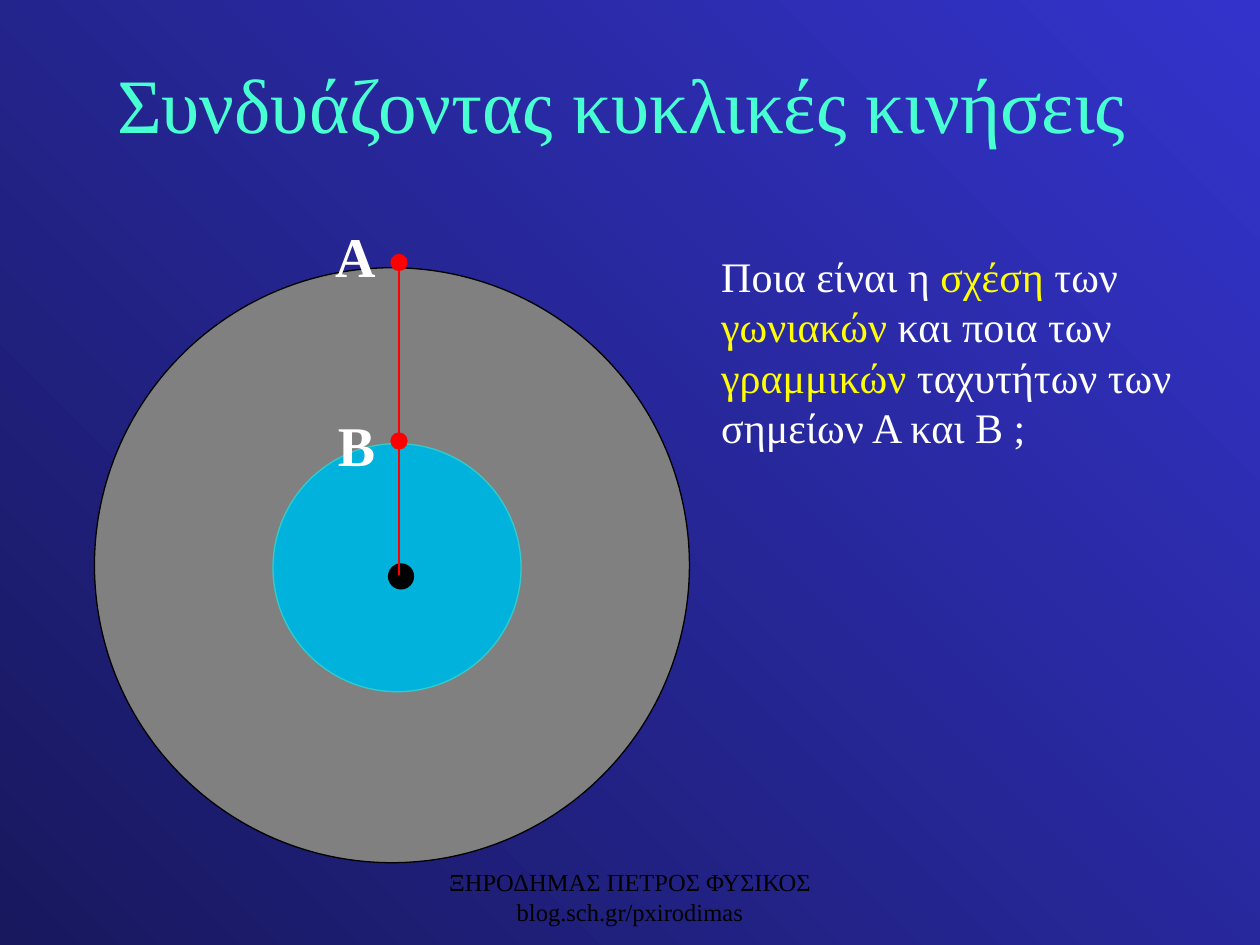
import dataclasses

import lxml.etree
import pptx
import pptx.dml.color
import pptx.enum.shapes
import pptx.enum.text
import pptx.oxml.ns
import pptx.util

Pt = pptx.util.Pt


@dataclasses.dataclass(frozen=True)
class Theme:
    font: str = "Times New Roman"
    background_start: str = "18185E"
    background_end: str = "3333CC"
    title: str = "47FFD1"
    text: str = "FFFFFF"
    highlight: str = "FFFF00"
    dark: str = "000000"
    outer_disc: str = "808080"
    inner_disc: str = "00B2DC"
    inner_outline: str = "33CCCC"
    radius: str = "FF0000"
    title_size: float = 44
    label_size: float = 32
    body_size: float = 24
    footer_size: float = 14
    line_width: float = 0.75


THEME = Theme()
ALIGN = pptx.enum.text.PP_ALIGN
ANCHOR = pptx.enum.text.MSO_ANCHOR
AUTO_SIZE = pptx.enum.text.MSO_AUTO_SIZE


def rgb(color):
    return pptx.dml.color.RGBColor.from_string(color)


def paint_background(slide):
    fill = slide.background.fill
    fill.gradient()
    fill.gradient_angle = 45
    for stop, color in zip(fill.gradient_stops, (THEME.background_start, THEME.background_end)):
        stop.color.rgb = rgb(color)


def add_text(shapes, text, box, size, color=THEME.text, bold=False,
             align=ALIGN.LEFT, anchor=ANCHOR.TOP, auto_size=AUTO_SIZE.NONE):
    frame = shapes.add_textbox(*map(Pt, box)).text_frame
    frame.word_wrap = True
    frame.auto_size = auto_size
    frame.vertical_anchor = anchor
    paragraph = frame.paragraphs[0]
    paragraph.alignment = align
    parts = [(text, color)] if isinstance(text, str) else text
    for words, run_color in parts:
        run = paragraph.add_run()
        run.text = words
        run.font.name = THEME.font
        run.font.size = Pt(size)
        run.font.bold = bold
        run.font.color.rgb = rgb(run_color)


def add_disc(shapes, left, top, diameter, fill, outline):
    disc = shapes.add_shape(pptx.enum.shapes.MSO_SHAPE.OVAL,
                            Pt(left), Pt(top), Pt(diameter), Pt(diameter))
    disc.shadow.inherit = False
    disc.fill.solid()
    disc.fill.fore_color.rgb = rgb(fill)
    disc.line.color.rgb = rgb(outline)
    disc.line.width = Pt(THEME.line_width)


def add_radius(shapes, x, start, end):
    radius = shapes.add_connector(pptx.enum.shapes.MSO_CONNECTOR.STRAIGHT,
                                  Pt(x), Pt(start), Pt(x), Pt(end))
    radius.line.color.rgb = rgb(THEME.radius)
    radius.line.width = Pt(THEME.line_width)
    qn = pptx.oxml.ns.qn
    lxml.etree.SubElement(radius.line._get_or_add_ln(), qn("a:tailEnd"),
                          type="oval", w="lg", len="lg")
    lxml.etree.SubElement(radius._element.spPr, qn("a:effectLst"))


def add_wheel(slide):
    shapes = slide.shapes.add_group_shape().shapes
    add_disc(shapes, 54, 153, 340, THEME.outer_disc, THEME.dark)
    add_disc(shapes, 156, 253.5, 141.75, THEME.inner_disc, THEME.inner_outline)
    add_disc(shapes, 222, 322.25, 14.25, THEME.dark, THEME.dark)
    for start, end in ((328.5, 150), (322.5, 252)):
        add_radius(shapes, 228, start, end)
    for letter, left, top in (("Α", 184.5, 123), ("Β", 186, 231)):
        add_text(shapes, letter, (left, top, 56.75, 45.5), THEME.label_size,
                 bold=True, auto_size=AUTO_SIZE.SHAPE_TO_FIT_TEXT)


def main():
    presentation = pptx.Presentation()
    presentation.slide_width, presentation.slide_height = Pt(720), Pt(540)
    slide = presentation.slides.add_slide(presentation.slide_layouts[6])
    paint_background(slide)
    add_text(slide.shapes, "Συνδυάζοντας κυκλικές κινήσεις", (49.5, 13.5, 612, 90),
             THEME.title_size, color=THEME.title, align=ALIGN.CENTER, anchor=ANCHOR.MIDDLE)
    question = [
        ("Ποια είναι η ", THEME.text),
        ("σχέση", THEME.highlight),
        (" των ", THEME.text),
        ("γωνιακών", THEME.highlight),
        (" και ποια των ", THEME.text),
        ("γραμμικών", THEME.highlight),
        (" ταχυτήτων των σημείων Α και Β ;", THEME.text),
    ]
    add_text(slide.shapes, question, (405, 139.5, 289.5, 124), THEME.body_size,
             auto_size=AUTO_SIZE.SHAPE_TO_FIT_TEXT)
    add_wheel(slide)
    add_text(slide.shapes, "ΞΗΡΟΔΗΜΑΣ ΠΕΤΡΟΣ ΦΥΣΙΚΟΣ blog.sch.gr/pxirodimas",
             (246, 492, 228, 36), THEME.footer_size, color=THEME.dark, align=ALIGN.CENTER)
    presentation.save("out.pptx")


if __name__ == "__main__":
    main()
